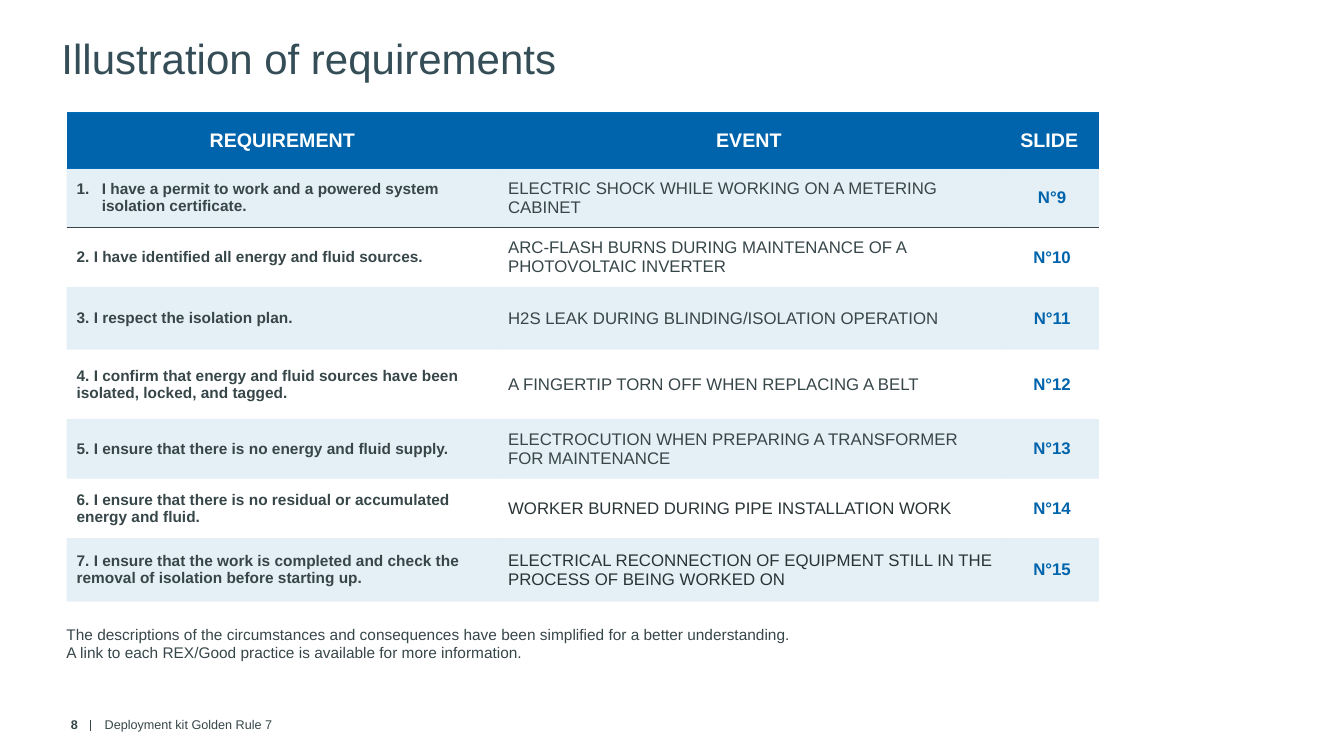
import pptx
import pptx.util
import pptx.dml.color
import pptx.enum.shapes
import pptx.enum.text
import pptx.oxml
import pptx.oxml.ns
from lxml import etree

Inches = pptx.util.Inches
Pt = pptx.util.Pt
RGB = pptx.dml.color.RGBColor
ALIGN = pptx.enum.text.PP_ALIGN
ANCHOR = pptx.enum.text.MSO_ANCHOR
qn = pptx.oxml.ns.qn

BLUE = RGB(0x00, 0x64, 0xAC)
EDGE = RGB(0x00, 0x6C, 0xB7)
GREY = RGB(0x37, 0x46, 0x49)
DARK = RGB(0x29, 0x34, 0x37)
SLATE = RGB(0x35, 0x4D, 0x56)
WHITE = RGB(0xFF, 0xFF, 0xFF)
PLAIN = "{2D5ABB26-0587-4C30-8999-92F81FD0307C}"

WIDTHS = [4.28, 5.03, 0.93]
HEIGHTS = [0.55, 0.59, 0.59, 0.62, 0.69, 0.59, 0.59, 0.63]
HEADS = ["REQUIREMENT", "EVENT ", "SLIDE "]
RULES = [
    ("I have a permit to work and a powered system isolation certificate.",
     "ELECTRIC SHOCK WHILE WORKING ON A METERING CABINET"),
    ("2. I have identified all energy and fluid sources.",
     "ARC-FLASH BURNS DURING MAINTENANCE OF A PHOTOVOLTAIC INVERTER"),
    ("3. I respect the isolation plan.",
     "H2S LEAK DURING BLINDING/ISOLATION OPERATION"),
    ("4. I confirm that energy and fluid sources have been isolated, locked, and tagged.",
     "A FINGERTIP TORN OFF WHEN REPLACING A BELT"),
    ("5. I ensure that there is no energy and fluid supply.",
     "ELECTROCUTION WHEN PREPARING A TRANSFORMER FOR MAINTENANCE"),
    ("6. I ensure that there is no residual or accumulated energy and fluid.",
     "WORKER BURNED DURING PIPE INSTALLATION WORK"),
    ("7. I ensure that the work is completed and check the removal of isolation before starting up.",
     "ELECTRICAL RECONNECTION OF EQUIPMENT STILL IN THE PROCESS OF BEING WORKED ON"),
]


def style(frame, size, color, bold=False, align=ALIGN.LEFT):
    for para in frame.paragraphs:
        para.alignment = align
        for run in para.runs:
            run.font.name = "Arial"
            run.font.size = Pt(size)
            run.font.bold = bold
            run.font.color.rgb = color


def add_text(slide, box, text, size, bold=False, align=ALIGN.LEFT):
    shape = slide.shapes.add_textbox(*map(Inches, box))
    frame = shape.text_frame
    frame.word_wrap = True
    frame.text = text
    style(frame, size, GREY, bold, align)
    return frame


def add_title(slide, box):
    title = slide.shapes.title
    title.left, title.top, title.width, title.height = map(Inches, box)
    frame = title.text_frame
    frame.text = "Illustration of requirements"
    frame.auto_size = pptx.enum.text.MSO_AUTO_SIZE.NONE
    frame.vertical_anchor = ANCHOR.TOP
    style(frame, 30, SLATE)


def add_edge(cell, side, color):
    props = cell._tc.get_or_add_tcPr()
    line = etree.SubElement(props, qn("a:" + side), w=str(Pt(1)))
    fill = etree.SubElement(line, qn("a:solidFill"))
    etree.SubElement(fill, qn("a:srgbClr"), val=str(color))


def fill_cell(cell, alpha=100):
    cell.fill.solid()
    cell.fill.fore_color.rgb = BLUE
    if alpha < 100:
        tint = cell._tc.tcPr.find(qn("a:solidFill")).find(qn("a:srgbClr"))
        etree.SubElement(tint, qn("a:alpha"), val=str(alpha * 1000))


def add_number(para):
    props = para._p.get_or_add_pPr()
    props.set("marL", str(Inches(0.25)))
    props.set("indent", str(Inches(-0.25)))
    etree.SubElement(props, qn("a:buFont"), typeface="+mj-lt")
    etree.SubElement(props, qn("a:buAutoNum"), type="arabicPeriod")


def add_rules(slide, box):
    frame = slide.shapes.add_table(len(HEIGHTS), len(WIDTHS), *map(Inches, box))
    table = frame.table
    table._tbl.tblPr.find(qn("a:tableStyleId")).text = PLAIN
    table.horz_banding = False
    for col, width in zip(table.columns, WIDTHS):
        col.width = Inches(width)
    for row, height in zip(table.rows, HEIGHTS):
        row.height = Inches(height)
    for col, head in enumerate(HEADS):
        cell = table.cell(0, col)
        cell.text_frame.text = head
        style(cell.text_frame, 14, WHITE, True, ALIGN.CENTER)
        add_edge(cell, "lnT", EDGE)
        add_edge(cell, "lnB", EDGE)
        fill_cell(cell)
    for row, (rule, event) in enumerate(RULES, 1):
        ink = DARK if row > 5 else GREY
        looks = [(rule, 11, GREY, True, ALIGN.LEFT),
                 (event, 12, ink, False, ALIGN.LEFT),
                 (f"N°{row + 8}", 12, BLUE, True, ALIGN.CENTER)]
        for col, (text, *look) in enumerate(looks):
            cell = table.cell(row, col)
            cell.text_frame.text = text
            style(cell.text_frame, *look)
            if row == 1:
                add_edge(cell, "lnT", EDGE)
                add_edge(cell, "lnB", GREY)
            if row % 2:
                fill_cell(cell, 10)
            else:
                cell.fill.background()
    add_number(table.cell(1, 0).text_frame.paragraphs[0])
    for cell in table.iter_cells():
        cell.vertical_anchor = ANCHOR.MIDDLE


def add_note(slide, box):
    frame = add_text(
        slide, box,
        "The descriptions of the circumstances and consequences have been "
        "simplified for a better understanding.\n"
        "A link to each REX/Good practice is available for more information.", 11)
    frame.margin_left = frame.margin_right = 0
    frame.margin_top = frame.margin_bottom = 0


def add_footer(slide, box):
    left, top, width, height = box
    parts = [((left, top, 0.63, height), "8", True, ALIGN.RIGHT),
             ((left + 0.7, top, width - 0.7, height),
              "Deployment kit Golden Rule 7", False, ALIGN.LEFT)]
    for place, text, bold, align in parts:
        frame = add_text(slide, place, text, 9, bold, align)
        frame.vertical_anchor = ANCHOR.MIDDLE
    x = Inches(left + 0.66)
    bar = slide.shapes.add_connector(
        pptx.enum.shapes.MSO_CONNECTOR.STRAIGHT,
        x, Inches(top + 0.09), x, Inches(top + 0.2))
    bar.line.color.rgb = GREY
    bar.line.width = Pt(1)
    etree.SubElement(bar._element.spPr, qn("a:effectLst"))


def main():
    deck = pptx.Presentation()
    deck.slide_width = Inches(13.33)
    deck.slide_height = Inches(7.5)
    slide = deck.slides.add_slide(deck.slide_layouts[5])
    add_title(slide, (0.51, 0.27, 10.63, 1.1))
    add_rules(slide, (0.66, 1.12, sum(WIDTHS), sum(HEIGHTS)))
    add_note(slide, (0.66, 6.2, 10.63, 0.37))
    add_footer(slide, (0.24, 7.05, 4.64, 0.28))
    deck.save("out.pptx")


if __name__ == "__main__":
    main()
